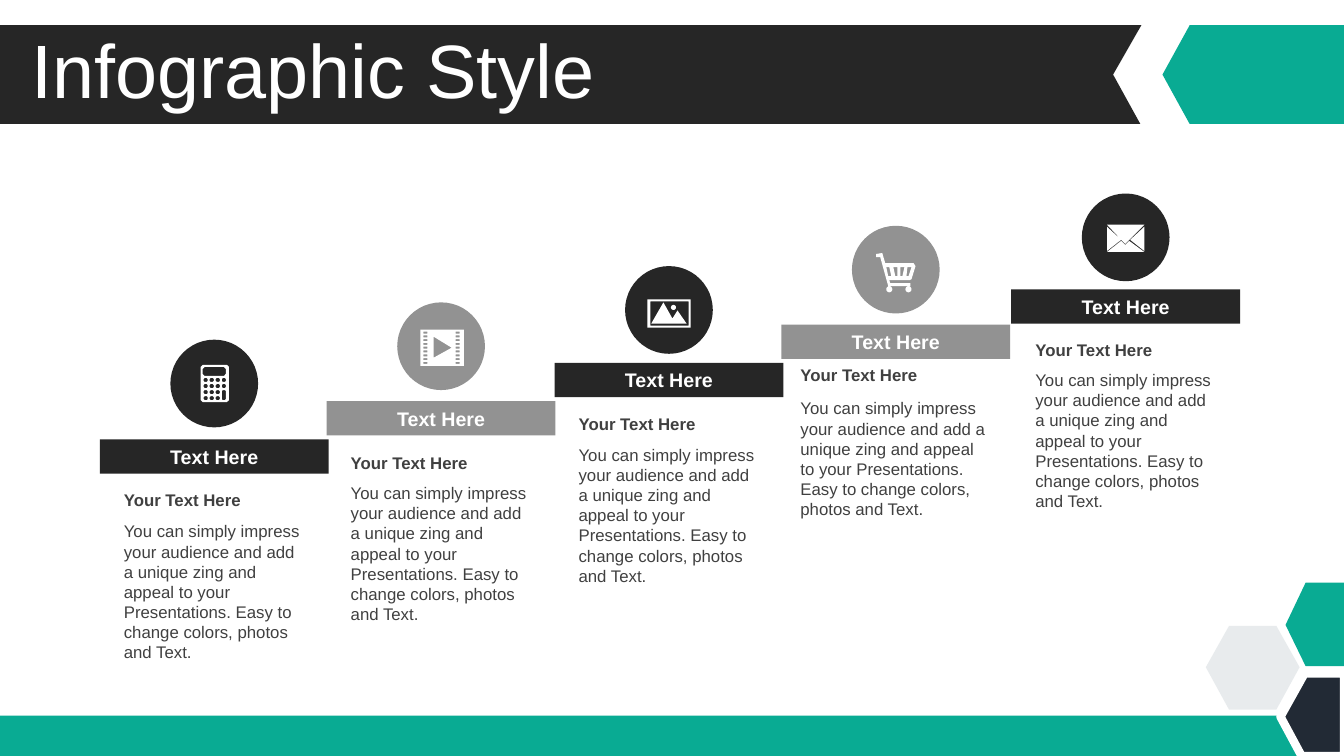
import math
import pptx
import pptx.util
import pptx.dml.color
import pptx.enum.shapes
import pptx.enum.text
import pptx.oxml
import pptx.oxml.ns
from pptx.util import Inches

COLORS = {
    "dark": "262626", "gray": "929292", "teal": "09AB93", "navy": "222A35",
    "silver": "D9DEE2", "text": "404040", "white": "FFFFFF",
}
RGB = {name: pptx.dml.color.RGBColor.from_string(c) for name, c in COLORS.items()}
SHAPE = pptx.enum.shapes.MSO_SHAPE
ALIGN = pptx.enum.text.PP_ALIGN
BODY = ("You can simply impress your audience and add a unique zing and appeal "
        "to your Presentations. Easy to change colors, photos and Text.")

prs = pptx.Presentation()
prs.slide_width, prs.slide_height = Inches(13.33), Inches(7.5)
s = prs.slides.add_slide(prs.slide_layouts[5])


def box(x, y, w, h, cut=0):
    if not cut:
        return [(x, y), (x + w, y), (x + w, y + h), (x, y + h)]
    return [(x + cut, y), (x + w - cut, y), (x + w, y + cut), (x + w, y + h - cut),
            (x + w - cut, y + h), (x + cut, y + h), (x, y + h - cut), (x, y + cut)]


def outline(contours, color):
    contours = [[(Inches(x), Inches(y)) for x, y in c] for c in contours]
    fb = s.shapes.build_freeform(*contours[0][0])
    fb.add_line_segments(contours[0][1:])
    for c in contours[1:]:
        fb.move_to(*c[0])
        fb.add_line_segments(c[1:])
    sp = fb.convert_to_shape()
    sp.shadow.inherit = False
    sp.fill.solid()
    sp.fill.fore_color.rgb = RGB[color]
    sp.line.fill.background()
    return sp


outline([[(0, 0.25), (11.32, 0.25), (11.04, 0.74), (11.31, 1.23), (0, 1.23)]], "dark")
hexagon = outline([[(11.96, 6.62), (12.19, 6.21), (12.66, 6.21),
                    (12.89, 6.62), (12.66, 7.04), (12.19, 7.04)]], "silver")
clr = hexagon.element.spPr.find(".//" + pptx.oxml.ns.qn("a:srgbClr"))
clr.append(pptx.oxml.parse_xml(
    '<a:alpha %s val="60000"/>' % pptx.oxml.ns.nsdecls("a")))
outline([[(12.95, 5.78), (13.33, 5.78), (13.33, 6.61), (12.95, 6.61), (12.75, 6.2)]], "teal")
footer = s.shapes.add_shape(SHAPE.RECTANGLE, 0, Inches(7.1), prs.slide_width, Inches(0.4))
footer.shadow.inherit = False
footer.fill.solid()
footer.fill.fore_color.rgb = RGB["teal"]
footer.line.fill.background()
corner = outline([[(13.33, 6.68), (13.33, 7.5), (12.91, 7.5), (12.7, 7.11), (12.94, 6.68)]], "navy")
corner.line.color.rgb = RGB["white"]
corner.line.width = pptx.util.Pt(6)
outline([[(11.8, 0.25), (13.33, 0.25), (13.33, 1.23), (11.8, 1.23), (11.53, 0.74)]], "teal")

title = s.shapes.title
title.left, title.top, title.width, title.height = map(Inches, (0.21, 0.34, 10.53, 0.79))
s.shapes.element.append(title.element)
tf = title.text_frame
tf.text = "Infographic Style"
tf.word_wrap = True
tf.auto_size = pptx.enum.text.MSO_AUTO_SIZE.NONE
tf.vertical_anchor = pptx.enum.text.MSO_ANCHOR.MIDDLE
p = tf.paragraphs[0]
p.alignment = ALIGN.LEFT
p.line_spacing = 0.9
p.space_before = pptx.util.Pt(10)
p.font.size, p.font.name = pptx.util.Pt(54), "Arial"
p.font.color.rgb = RGB["white"]

steps = [
    ("dark", 0.99, 4.36, 3.37, 1.13, 4.81, 5.12, 1.99, 1.51),
    ("gray", 3.24, 3.98, 3.0, 3.38, 4.44, 4.74, 1.99, 1.51),
    ("dark", 5.5, 3.6, 2.64, 5.64, 4.06, 4.36, 1.99, 1.51),
    ("gray", 7.75, 3.22, 2.24, 7.84, 3.57, 3.9, 2.08, 1.31),
    ("dark", 10.03, 2.87, 1.92, 10.17, 3.32, 3.62, 1.99, 1.51),
]
for color, x, bar_y, disc_y, text_x, head_y, body_y, text_w, body_h in steps:
    bar = s.shapes.add_shape(SHAPE.RECTANGLE, Inches(x), Inches(bar_y), Inches(2.27), Inches(0.34))
    disc = s.shapes.add_shape(SHAPE.OVAL, Inches(x + 0.7), Inches(disc_y), Inches(0.87), Inches(0.87))
    for sp in (bar, disc):
        sp.shadow.inherit = False
        sp.fill.solid()
        sp.fill.fore_color.rgb = RGB[color]
        sp.line.fill.background()
    head = s.shapes.add_textbox(Inches(text_x), Inches(head_y), Inches(text_w), Inches(0.3))
    body = s.shapes.add_textbox(Inches(text_x), Inches(body_y), Inches(text_w), Inches(body_h))
    for sp, text, size, bold, ink, align in (
        (bar, "Text Here", 14, True, "white", ALIGN.CENTER),
        (head, "Your Text Here", 12, True, "text", ALIGN.LEFT),
        (body, BODY, 12, False, "text", ALIGN.LEFT),
    ):
        tf = sp.text_frame
        tf.text = text
        tf.word_wrap = True
        tf.auto_size = pptx.enum.text.MSO_AUTO_SIZE.SHAPE_TO_FIT_TEXT
        p = tf.paragraphs[0]
        p.alignment = align
        p.font.size, p.font.name, p.font.bold = pptx.util.Pt(size), "Arial", bold
        p.font.color.rgb = RGB[ink]

circle = [(math.cos(math.pi * k / 8), math.sin(math.pi * k / 8)) for k in range(16)]

keys = [box(2.02 + 0.06 * i, 3.75 + 0.06 * j, 0.04, 0.04, 0.01)
        for i in range(4) for j in range(4) if i < 3 or j < 2]
outline([box(1.99, 3.62, 0.28, 0.37, 0.02), box(2.01, 3.64, 0.23, 0.09, 0.02),
         box(2.2, 3.87, 0.04, 0.1, 0.01)] + keys, "white")

holes = [box(x, 3.29 + 0.3 * k / 8, 0.04, 0.02) for x in (4.2, 4.52) for k in range(9)]
outline([box(4.17, 3.27, 0.43, 0.36), [(4.3, 3.34), (4.3, 3.55), (4.48, 3.45)]] + holes, "white")

outline([box(6.42, 2.97, 0.43, 0.28), box(6.45, 2.99, 0.38, 0.24),
         [(6.58, 3), (6.67, 3.16), (6.72, 3.08), (6.81, 3.21), (6.46, 3.21)],
         [(6.68 + 0.025 * x, 3.05 + 0.025 * y) for x, y in circle]], "white")

wheels = [[(cx + 0.03 * x, 2.87 + 0.03 * y) for x, y in circle] for cx in (8.82, 9.01)]
outline([
    [(8.69, 2.52), (8.75, 2.51), (8.78, 2.61), (9.06, 2.61), (9.08, 2.64), (9.04, 2.77),
     (9.02, 2.78), (8.82, 2.78), (8.83, 2.81), (9.03, 2.81), (9.03, 2.84), (8.81, 2.84),
     (8.73, 2.55), (8.69, 2.55)],
    [(8.79, 2.65), (8.82, 2.65), (8.84, 2.74), (8.81, 2.74)],
    [(8.86, 2.65), (8.9, 2.65), (8.9, 2.74), (8.88, 2.74)],
    [(8.93, 2.65), (8.97, 2.65), (8.95, 2.74), (8.93, 2.74)],
    [(9, 2.65), (9.04, 2.65), (9.01, 2.74), (8.99, 2.74)],
] + wheels, "white")

outline([
    [(10.98, 2.23), (11.35, 2.23), (11.16, 2.42)],
    [(10.98, 2.25), (11.12, 2.38), (10.98, 2.49)],
    [(11.35, 2.25), (11.35, 2.49), (11.21, 2.38)],
    [(11.2, 2.39), (11.35, 2.5), (10.98, 2.5), (11.12, 2.39), (11.16, 2.43)],
], "white")

prs.save("out.pptx")
